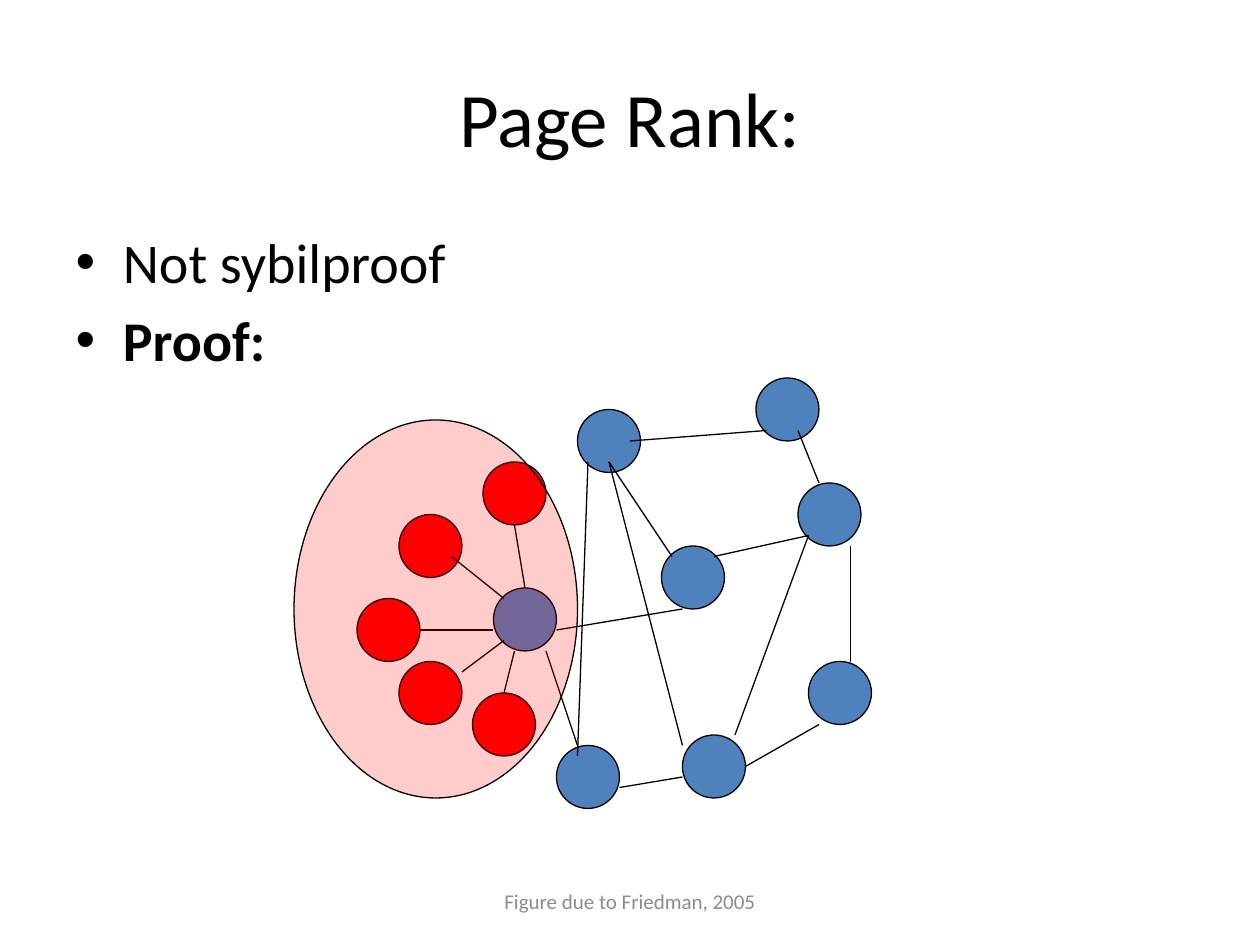
from lxml.etree import SubElement
from pptx import Presentation
from pptx.dml.color import RGBColor as Rgb
from pptx.enum.shapes import MSO_CONNECTOR as Link, MSO_SHAPE as Preset
from pptx.enum.text import MSO_ANCHOR as Anchor, PP_ALIGN as Align
from pptx.oxml.ns import qn
from pptx.util import Cm, Pt

THEME = {
    "font": "Calibri",
    "ink": Rgb(0x00, 0x00, 0x00),
    "muted": Rgb(0x8C, 0x8C, 0x8C),
    "honest": Rgb(0x4F, 0x81, 0xBD),
    "sybil": Rgb(0xFF, 0x00, 0x00),
    "title": Pt(44),
    "body": Pt(32),
    "credit": Pt(12),
    "line": Pt(0.75),
}
GRID = 2.54 / 12  # the graph sits on a grid of twelve steps to the inch
NODE = 6

# Top left corners of the nodes, and both ends of the edges, in grid steps
honest_nodes = [(47, 56), (55, 39), (53, 71), (76, 46),
                (65, 70), (63, 52), (77, 63), (72, 36)]
honest_edges = [
    (60, 42, 73, 41), (58, 44, 64, 53), (53, 60, 65, 58), (52, 62, 55, 71),
    (59, 75, 65, 74), (77, 51, 70, 70), (78, 69, 71, 73), (81, 52, 81, 63),
    (58, 44, 65, 71), (56, 44, 55, 72), (68, 53, 77, 51), (76, 41, 78, 46),
]
sybil_nodes = [(45, 66), (34, 57), (38, 49), (38, 63), (46, 44)]
sybil_edges = [(48, 66, 49, 62), (43, 53, 48, 57), (40, 60, 47, 60),
               (49, 50, 50, 56), (44, 64, 48, 61)]


def add_ellipse(left, top, width, height, color):
    """Draw an outlined ellipse, measured in grid steps."""
    ellipse = page.shapes.add_shape(
        Preset.OVAL, *(Cm(GRID * step) for step in (left, top, width, height)))
    ellipse.shadow.inherit = False
    ellipse.fill.solid()
    ellipse.fill.fore_color.rgb = color
    ellipse.line.color.rgb = THEME["ink"]
    ellipse.line.width = THEME["line"]
    return ellipse


def format_text(para, size, color, **extras):
    values = {"name": THEME["font"], "size": THEME[size], **extras}
    for span in para.runs:
        for name, value in values.items():
            setattr(span.font, name, value)
        span.font.color.rgb = THEME[color]


deck = Presentation()
deck.slide_width, deck.slide_height = Cm(25.4), Cm(19.05)
page = deck.slides.add_slide(deck.slide_layouts[1])

# Title and list
title, body = page.placeholders
places = [(title, (1.27, 0.76, 22.86, 3.18)), (body, (1.27, 4.45, 22.86, 12.57))]
for box, place in places:
    for name, length in zip(("left", "top", "width", "height"), place):
        setattr(box, name, Cm(length))

title.text_frame.text = "Page Rank:"
title.text_frame.vertical_anchor = Anchor.MIDDLE
title.text_frame.paragraphs[0].alignment = Align.CENTER
format_text(title.text_frame.paragraphs[0], "title", "ink")

body.text_frame.text = "Not sybilproof\nProof:"
for para, bold in zip(body.text_frame.paragraphs, (False, True)):
    format_text(para, "body", "ink", bold=bold)

# Graph: the honest nodes first, then the sybils
for kind, nodes, edges in [("honest", honest_nodes, honest_edges),
                           ("sybil", sybil_nodes, sybil_edges)]:
    for left, top in nodes:
        add_ellipse(left, top, NODE, NODE, THEME[kind])
    for ends in edges:
        edge = page.shapes.add_connector(
            Link.STRAIGHT, *(Cm(GRID * step) for step in ends))
        edge.line.color.rgb = THEME["ink"]
        edge.line.width = THEME["line"]
        SubElement(edge._element.spPr, qn("a:effectLst"))

# Translucent region around the sybils
region = add_ellipse(28, 40, 27, 36, THEME["sybil"])
tint = region._element.spPr.find(qn("a:solidFill"))[0]
SubElement(tint, qn("a:alpha"), val="20000")

# Credit
credit = page.shapes.add_textbox(Cm(8.68), Cm(17.65), Cm(8.04), Cm(1.02))
credit.text_frame.word_wrap = True
credit.text_frame.vertical_anchor = Anchor.MIDDLE
credit.text_frame.text = "Figure due to Friedman, 2005"
credit.text_frame.paragraphs[0].alignment = Align.CENTER
format_text(credit.text_frame.paragraphs[0], "credit", "muted")

deck.save("out.pptx")
